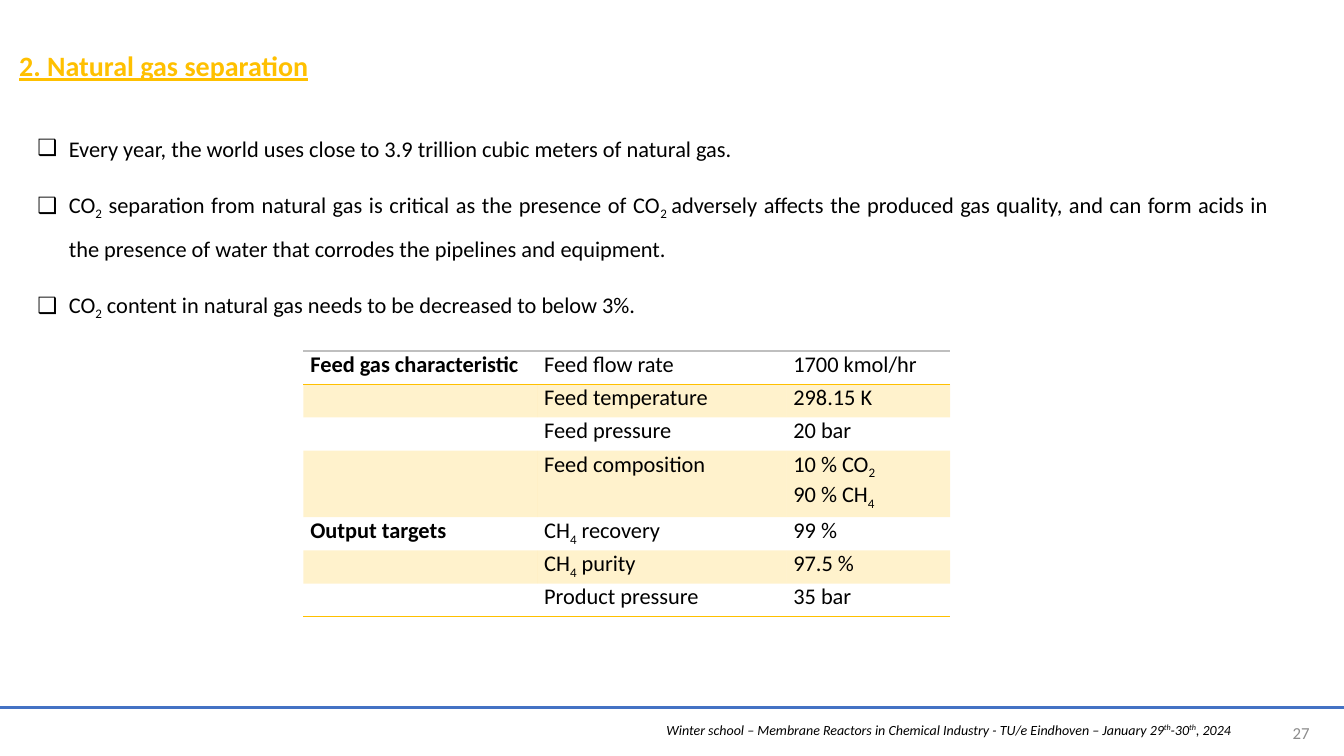
import pptx
import pptx.util
import pptx.dml.color
import pptx.enum.text
import pptx.oxml
import pptx.oxml.ns
import lxml.etree

Pt = pptx.util.Pt
ALIGN = pptx.enum.text.PP_ALIGN
ANCHOR = pptx.enum.text.MSO_ANCHOR
FIT = pptx.enum.text.MSO_AUTO_SIZE
qn = pptx.oxml.ns.qn

HUES = {"gold": "FFC000", "blue": "4472C4", "grey": "8C8C8C", "rule": "BFBFBF",
        "black": "000000", "white": "FFFFFF"}
PLAIN = "{2D5ABB26-0587-4C30-8999-92F81FD0307C}"  # table style without grid

FACTS = [
    "Every year, the world uses close to 3.9 trillion cubic meters of natural gas.",
    "CO|2| separation from natural gas is critical as the presence of CO|2 |adversely affects "
    "the produced gas quality, and can form acids in the presence of water that corrodes "
    "the pipelines and equipment.",
    "CO|2| content in natural gas needs to be decreased to below 3%.",
]
ROWS = [
    ("Feed gas characteristic", "Feed flow rate", "1700 kmol/hr"),
    ("", "Feed temperature", "298.15 K"),
    ("", "Feed pressure", "20 bar"),
    ("", "Feed composition", "10 % CO|2|\n90 % CH|4|"),
    ("Output targets", "CH|4| recovery", "99 %"),
    ("", "CH|4| purity", "97.5 %"),
    ("", "Product pressure", "35 bar"),
]
CREDIT = ("Winter school – Membrane Reactors in Chemical Industry - TU/e Eindhoven – "
          "January 29|th|-30|th|, 2024")


def rgb(hue):
    return pptx.dml.color.RGBColor.from_string(HUES[hue])


def put(item, vals):
    for name, val in vals.items():
        setattr(item, name, val)


def place(shape, box):
    put(shape, dict(zip(("left", "top", "width", "height"), map(Pt, box))))


def write(para, text, size, hue="black", shift=-25, **looks):
    """Fill a paragraph; every second part between bars is shifted off the baseline."""
    for num, part in enumerate(text.split("|")):
        if part:
            run = para.add_run()
            run.text = part
            put(run.font, {"name": "Calibri", "size": Pt(size), **looks})
            run.font.color.rgb = rgb(hue)
            if num % 2:
                run.font._element.set("baseline", str(shift * 1000))


def edge(cell, side, hue, width):
    props = cell._tc.get_or_add_tcPr()
    line = lxml.etree.SubElement(props, qn("a:ln" + side), w=str(Pt(width)))
    fill = lxml.etree.SubElement(line, qn("a:solidFill"))
    lxml.etree.SubElement(fill, qn("a:srgbClr"), val=HUES[hue])


def tint(cell, hue, part):
    cell.fill.solid()
    cell.fill.fore_color.rgb = rgb(hue)
    tone = cell._tc.tcPr.find(qn("a:solidFill")).find(qn("a:srgbClr"))
    lxml.etree.SubElement(tone, qn("a:alpha"), val=str(part * 1000))


def head(slide, box):
    title = slide.shapes.title
    place(title, box)
    put(title.text_frame, {"word_wrap": False, "auto_size": FIT.NONE,
                           "vertical_anchor": ANCHOR.TOP})
    para = title.text_frame.paragraphs[0]
    para.alignment = ALIGN.LEFT
    write(para, "2. Natural gas separation", 20, "gold", bold=True, underline=True)


def points(slide, box):
    body = slide.placeholders[1]
    place(body, box)
    frame = body.text_frame
    put(frame, {"word_wrap": True, "auto_size": FIT.NONE, "vertical_anchor": ANCHOR.TOP})
    for num, fact in enumerate(FACTS):
        para = frame.add_paragraph() if num else frame.paragraphs[0]
        props = para._p.get_or_add_pPr()
        props.set("marL", str(Pt(22.5)))
        props.set("indent", str(-Pt(22.5)))
        lxml.etree.SubElement(props, qn("a:buChar"), char="❑")
        put(para, {"alignment": ALIGN.JUSTIFY, "line_spacing": 1.5,
                   "space_before": Pt(0), "space_after": Pt(10)})
        write(para, fact, 16)


def grid(slide, box):
    wides, tall = (167, 178, 117), 23.75
    frame = slide.shapes.add_table(len(ROWS), len(wides), *map(Pt, box))
    table = frame.table
    put(table, {"first_row": False, "horz_banding": False})
    table._tbl.tblPr.find(qn("a:tableStyleId")).text = PLAIN
    for col, wide in zip(table.columns, wides):
        col.width = Pt(wide)
    for y, row in enumerate(ROWS):
        lines = max(text.count("\n") + 1 for text in row)
        table.rows[y].height = Pt(tall * lines)
        for x, text in enumerate(row):
            cell = table.cell(y, x)
            put(cell, {"margin_left": Pt(5), "margin_right": Pt(5),
                       "margin_top": 0, "margin_bottom": 0})
            if y == 0:
                edge(cell, "T", "rule", 1)
            if y in (0, len(ROWS) - 1):
                edge(cell, "B", "gold", 1)
            if y % 2:
                tint(cell, "gold", 20)
            else:
                cell.fill.background()
            for num, line in enumerate(text.split("\n")):
                para = cell.text_frame.add_paragraph() if num else cell.text_frame.paragraphs[0]
                para.alignment = ALIGN.JUSTIFY
                write(para, line, 16, bold=x == 0)


def foot(slide, box):
    left, top, wide, tall = box
    rule = slide.shapes.add_connector(1, Pt(left), Pt(top), Pt(left + wide), Pt(top))
    rule.line.color.rgb = rgb("blue")
    rule.line.width = Pt(2)
    lxml.etree.SubElement(rule._element.spPr, qn("a:effectLst"))

    note = slide.shapes.add_textbox(Pt(left + 469), Pt(top + 6), Pt(465), Pt(20))
    note.fill.solid()
    note.fill.fore_color.rgb = rgb("white")
    note.text_frame.word_wrap = True
    write(note.text_frame.paragraphs[0], CREDIT, 10, shift=30, italic=True)

    page = slide.shapes.add_textbox(Pt(left + 845), Pt(top + 1.5), Pt(97.5), Pt(32.5))
    put(page.text_frame, {"word_wrap": True, "vertical_anchor": ANCHOR.MIDDLE})
    para = page.text_frame.paragraphs[0]
    para.alignment = ALIGN.RIGHT
    write(para, "27", 12, "grey")


def main():
    deck = pptx.Presentation()
    put(deck, {"slide_width": Pt(960), "slide_height": Pt(540)})
    slide = deck.slides.add_slide(deck.slide_layouts[1])
    foot(slide, (0, 505.5, 960, 34.5))
    grid(slide, (216.75, 250.75, 462, 190))
    points(slide, (19.5, 83, 893.5, 141))
    head(slide, (6.5, 31, 231, 31.5))
    deck.save("out.pptx")


if __name__ == "__main__":
    main()
